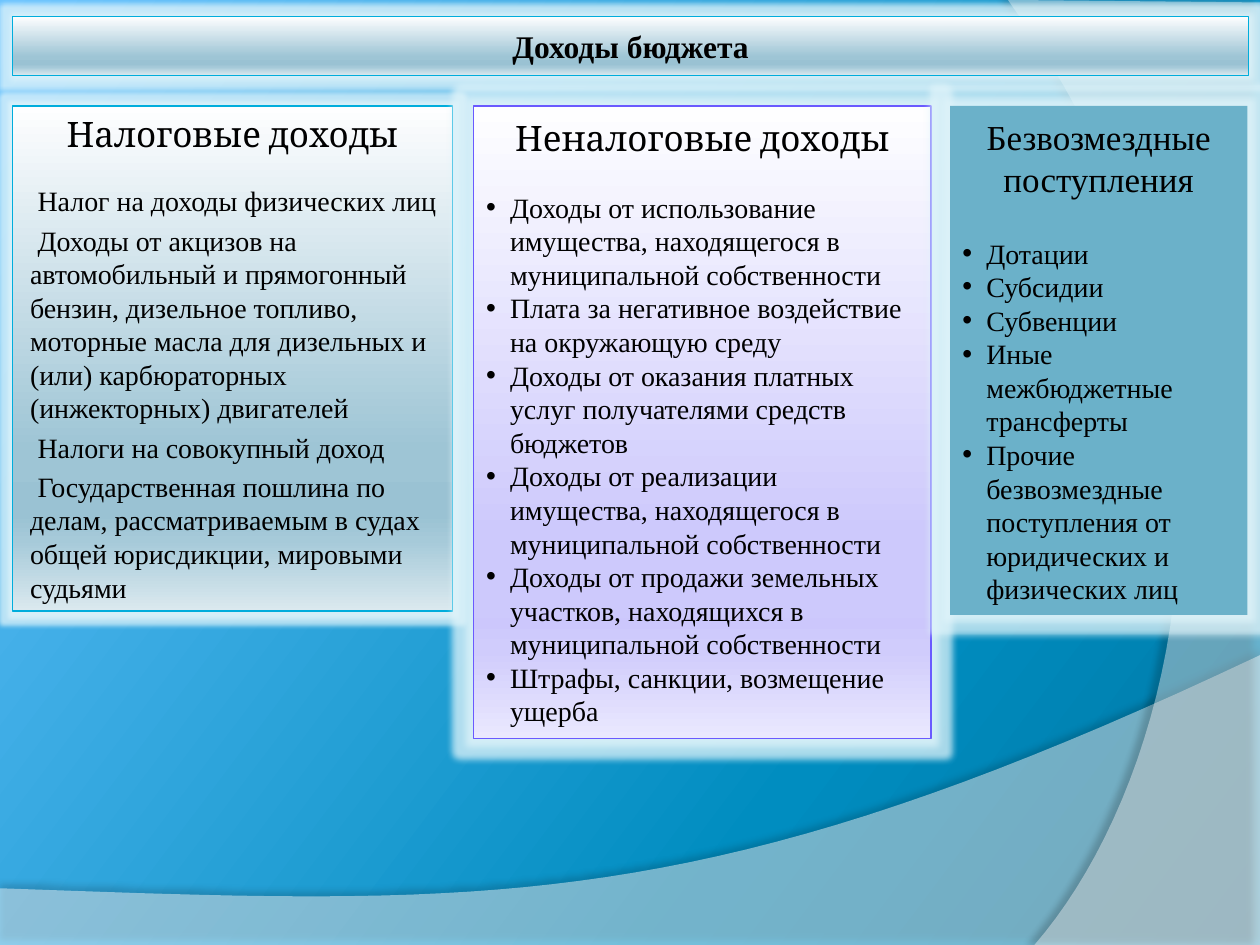
from pptx import Presentation
from pptx.dml.color import RGBColor
from pptx.enum.shapes import MSO_SHAPE as SHAPE
from pptx.enum.text import MSO_ANCHOR as ANCHOR, PP_ALIGN as ALIGN
from pptx.oxml.ns import qn
from pptx.util import Inches, Pt
from lxml.etree import SubElement

BLACK = RGBColor(0x00, 0x00, 0x00)
WHITE = RGBColor(0xFF, 0xFF, 0xFF)
GLOW = RGBColor(0xE0, 0xF4, 0xFA)
CYAN = RGBColor(0x00, 0xAD, 0xDC)
VIOLET = RGBColor(0x6A, 0x5A, 0xFF)
TEAL = RGBColor(0x6B, 0xB1, 0xC9)
PALE = RGBColor(0xFE, 0xFE, 0xFF)

SKY_STOPS = [(0, RGBColor(0x00, 0x76, 0xA1)), (30, RGBColor(0x00, 0x8D, 0xC0)),
             (100, RGBColor(0x6A, 0xC3, 0xFF))]
CYAN_STOPS = [(0, PALE), (68, RGBColor(0x9E, 0xC5, 0xD5)), (81, RGBColor(0x9A, 0xC2, 0xD3)),
              (86, RGBColor(0xA6, 0xCA, 0xD9)), (100, RGBColor(0xDB, 0xE9, 0xEF))]
VIOLET_STOPS = [(0, PALE), (68, RGBColor(0xCD, 0xC9, 0xFC)), (81, RGBColor(0xCC, 0xC7, 0xFC)),
                (86, RGBColor(0xD0, 0xCC, 0xFC)), (100, RGBColor(0xEA, 0xE8, 0xFE))]

SERIF = "Times New Roman"
HEADING = "Cambria"

TAX = [
    "Налог на доходы физических лиц",
    "Доходы от акцизов на автомобильный и прямогонный бензин, дизельное топливо, "
    "моторные масла для дизельных и (или) карбюраторных (инжекторных) двигателей",
    "Налоги на совокупный доход",
    "Государственная пошлина по делам, рассматриваемым в судах общей юрисдикции, "
    "мировыми судьями",
]
NON_TAX = [
    "Доходы от использование имущества, находящегося в муниципальной собственности",
    "Плата за негативное воздействие на окружающую среду",
    "Доходы от оказания платных услуг получателями средств бюджетов",
    "Доходы от реализации имущества, находящегося в муниципальной собственности",
    "Доходы от продажи земельных участков, находящихся в муниципальной собственности",
    "Штрафы, санкции, возмещение ущерба",
]
GRANTS = [
    "Дотации",
    "Субсидии",
    "Субвенции",
    "Иные межбюджетные трансферты",
    "Прочие безвозмездные поступления от юридических и физических лиц",
]


def add_color(parent, color, opacity=100):
    clr = SubElement(parent, qn("a:srgbClr"), val=str(color))
    if opacity < 100:
        SubElement(clr, qn("a:alpha"), val=str(opacity * 1000))


def set_gradient(owner, fill, stops, angle):
    fill.gradient()
    grad = next(owner.element.iter(qn("a:gradFill")))
    gs_lst = grad.find(qn("a:gsLst"))
    for gs in list(gs_lst):
        gs_lst.remove(gs)
    for pos, color in stops:
        add_color(SubElement(gs_lst, qn("a:gs"), pos=str(pos * 1000)), color)
    grad.find(qn("a:lin")).set("ang", str(angle * 60000))


def add_effect(sp, tag, color, opacity, **attrs):
    sp.shadow.inherit = False
    effects = sp.element.spPr.find(qn("a:effectLst"))
    add_color(SubElement(effects, qn(tag), **attrs), color, opacity)


def bezier(points, steps=40):
    for i in range(1, steps + 1):
        t = i / steps
        weights = ((1 - t) ** 3, 3 * t * (1 - t) ** 2, 3 * t * t * (1 - t), t ** 3)
        yield tuple(sum(w * p[axis] for w, p in zip(weights, points)) for axis in (0, 1))


def add_wave(slide, corners, curve, opacity, blur, dist, direction):
    points = [(Inches(x), Inches(y)) for x, y in corners + list(bezier([corners[-1]] + curve))]
    builder = slide.shapes.build_freeform(*points[0])
    builder.add_line_segments(points[1:], close=True)
    sp = builder.convert_to_shape()
    sp.fill.solid()
    sp.fill.fore_color.rgb = WHITE
    sp.fill._xPr.find(qn("a:solidFill")).clear()
    add_color(sp.element.spPr.find(qn("a:solidFill")), WHITE, opacity[0])
    sp.line.fill.background()
    add_effect(sp, "a:outerShdw", BLACK, opacity[1], blurRad=str(Pt(blur)),
               dist=str(Pt(dist)), dir=str(direction * 60000), algn="ctr", rotWithShape="0")


def add_panel(slide, box, fill, line, glow, anchor=ANCHOR.MIDDLE):
    sp = slide.shapes.add_shape(SHAPE.RECTANGLE, *(Inches(v) for v in box))
    if isinstance(fill, list):
        set_gradient(sp, sp.fill, fill, 90)
    else:
        sp.fill.solid()
        sp.fill.fore_color.rgb = fill
    if line is None:
        sp.line.fill.background()
    else:
        sp.line.color.rgb = line
        sp.line.width = Pt(0.75)
    add_effect(sp, "a:glow", GLOW, 75, rad=str(Pt(glow)))
    sp.text_frame.word_wrap = True
    sp.text_frame.vertical_anchor = anchor
    return sp.text_frame


def set_text(p, text, size, font=SERIF, bold=False, align=ALIGN.LEFT):
    p.text = text
    p.alignment = align
    r = p.runs[0]
    r.font.size = Pt(size)
    r.font.name = font
    r.font.bold = bold
    r.font.color.rgb = BLACK


def add_items(tf, items, gap, margin, indent, spacing=0, bullet=False):
    for i, item in enumerate(items):
        p = tf.add_paragraph()
        set_text(p, item, 16)
        p.space_before = Pt(spacing if i else gap)
        pPr = p._p.get_or_add_pPr()
        pPr.set("marL", str(Inches(margin)))
        pPr.set("indent", str(Inches(indent)))
        if bullet:
            SubElement(pPr, qn("a:buFont"), typeface="Arial")
            SubElement(pPr, qn("a:buChar"), char="•")


def main():
    """Build the budget revenue slide."""
    prs = Presentation()
    prs.slide_width, prs.slide_height = Inches(10), Inches(7.5)
    s = prs.slides.add_slide(prs.slide_layouts[6])
    set_gradient(s, s.background.fill, SKY_STOPS, 217)

    add_wave(s, [(0, 7.05), (0, 7.5), (10, 7.5), (10, 5.2)],
             [(5.59, 7.29), (3.91, 7.19), (0, 7.05)], (45, 35), 4, 3.5, 270)
    add_wave(s, [(10, 0.02), (10, 7.5), (8.21, 7.5)],
             [(9.35, 6.19), (10.18, 3), (8, 0)], (40, 45), 4, 4, 180)

    tf = add_panel(s, (0.1, 0.13, 9.81, 0.47), CYAN_STOPS, CYAN, 5)
    set_text(tf.paragraphs[0], "Доходы бюджета", 18, bold=True, align=ALIGN.CENTER)

    tf = add_panel(s, (0.1, 0.84, 3.49, 4.01), CYAN_STOPS, CYAN, 5, ANCHOR.TOP)
    set_text(tf.paragraphs[0], "Налоговые доходы", 20, HEADING, align=ALIGN.CENTER)
    add_items(tf, TAX, 17, 0.04, 0.06, spacing=3.2)

    tf = add_panel(s, (3.76, 0.84, 3.63, 5.02), VIOLET_STOPS, VIOLET, 8)
    set_text(tf.paragraphs[0], "Неналоговые доходы", 20, HEADING, align=ALIGN.CENTER)
    add_items(tf, NON_TAX, 18, 0.19, -0.19, bullet=True)

    tf = add_panel(s, (7.54, 0.84, 2.36, 4.04), TEAL, None, 8)
    set_text(tf.paragraphs[0], "Безвозмездные поступления", 20, align=ALIGN.CENTER)
    add_items(tf, GRANTS, 21, 0.19, -0.19, bullet=True)

    prs.save("out.pptx")


if __name__ == "__main__":
    main()
